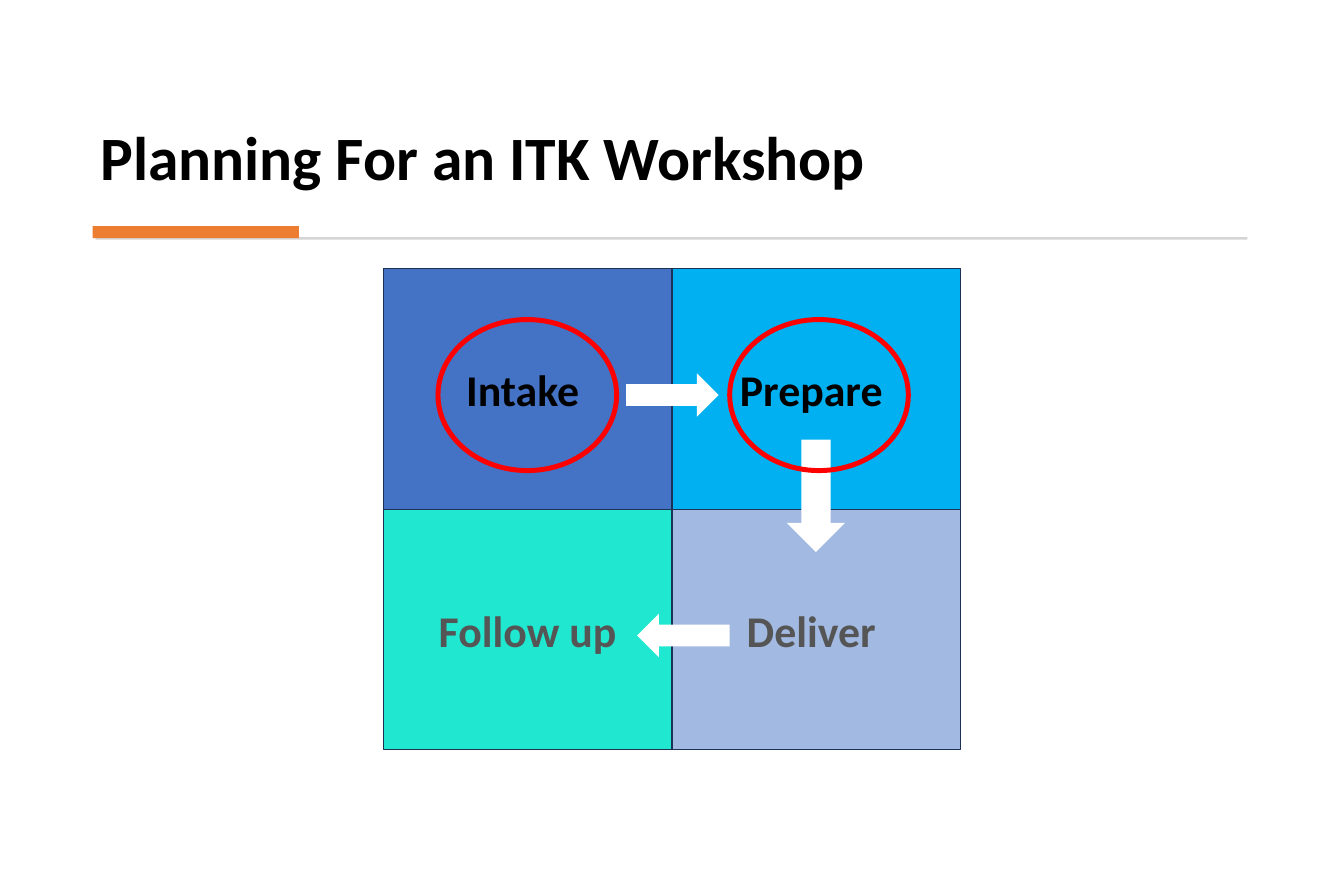
from pptx import Presentation
from pptx.dml.color import RGBColor
from pptx.enum.shapes import MSO_SHAPE
from pptx.enum.text import MSO_ANCHOR, PP_ALIGN
from pptx.util import Inches, Pt

BLACK = RGBColor(0x00, 0x00, 0x00)
GREY = RGBColor(0x55, 0x55, 0x55)
WHITE = RGBColor(0xFF, 0xFF, 0xFF)
RED = RGBColor(0xFF, 0x00, 0x00)
NAVY = RGBColor(0x1E, 0x32, 0x56)
ORANGE = RGBColor(0xED, 0x7D, 0x31)
RULE_GREY = RGBColor(0xD5, 0xD5, 0xD5)
BLUE = RGBColor(0x44, 0x72, 0xC4)
SKY = RGBColor(0x00, 0xB0, 0xF0)
TEAL = RGBColor(0x20, 0xE8, 0xD0)
PALE_BLUE = RGBColor(0xA2, 0xB9, 0xE2)

TITLE = "Planning For an ITK Workshop"
# Stages in reading order: label, fill, text colour
STAGES = [
    ("Intake ", BLUE, BLACK),
    ("Prepare ", SKY, BLACK),
    ("Follow up", TEAL, GREY),
    ("Deliver ", PALE_BLUE, GREY),
]
# Left, top, width, height, rotation
ARROWS = [
    (7.92, 4.72, 1.17, 0.55, 0),
    (9.61, 5.9, 1.42, 0.74, 90),
    (8.06, 7.76, 1.17, 0.55, 180),
]
RULES = [
    (1.21, 3, 14.57, 0.03, RULE_GREY),
    (1.17, 2.86, 2.61, 0.15, ORANGE),
]
GRID_LEFT, GRID_TOP, CELL_W, CELL_H, COLUMNS = 4.85, 3.4, 3.65, 3.04, 2
RING_LEFTS, RING_TOP, RING_W, RING_H = (5.54, 9.23), 4.04, 2.26, 1.91


def add_shape(s, kind, box, fill=None, line=None, width=1):
    sp = s.shapes.add_shape(kind, *map(Inches, box))
    sp.shadow.inherit = False
    if fill is None:
        sp.fill.background()
    else:
        sp.fill.solid()
        sp.fill.fore_color.rgb = fill
    if line is None:
        sp.line.fill.background()
    else:
        sp.line.color.rgb = line
        sp.line.width = Pt(width)
    return sp


def write(sp, text, size, color, anchor, **paragraph_format):
    tf = sp.text_frame
    tf.word_wrap = True
    tf.vertical_anchor = anchor
    p = tf.paragraphs[0]
    for name, value in paragraph_format.items():
        setattr(p, name, value)
    r = p.add_run()
    r.text = text
    for name, value in {"name": "Calibri", "size": Pt(size), "bold": True}.items():
        setattr(r.font, name, value)
    r.font.color.rgb = color


def main():
    prs = Presentation()
    prs.slide_width, prs.slide_height = Inches(17), Inches(11)
    s = prs.slides.add_slide(prs.slide_layouts[6])

    title = s.shapes.add_textbox(*map(Inches, (1.17, 1.08, 14.65, 1.42)))
    write(title, TITLE, 56.1, BLACK, MSO_ANCHOR.BOTTOM, line_spacing=0.9)

    for *box, color in RULES:
        add_shape(s, MSO_SHAPE.RECTANGLE, box, color)

    for i, (label, fill, color) in enumerate(STAGES):
        row, col = divmod(i, COLUMNS)
        box = (GRID_LEFT + col * CELL_W, GRID_TOP + row * CELL_H, CELL_W, CELL_H)
        sp = add_shape(s, MSO_SHAPE.RECTANGLE, box, fill, NAVY)
        write(sp, label, 39.9, color, MSO_ANCHOR.MIDDLE,
              alignment=PP_ALIGN.CENTER, space_after=Pt(7.7))

    for *box, rotation in ARROWS:
        add_shape(s, MSO_SHAPE.RIGHT_ARROW, box, WHITE).rotation = rotation

    for left in RING_LEFTS:
        add_shape(s, MSO_SHAPE.OVAL, (left, RING_TOP, RING_W, RING_H),
                  line=RED, width=4.5)

    prs.save("out.pptx")


if __name__ == "__main__":
    main()
